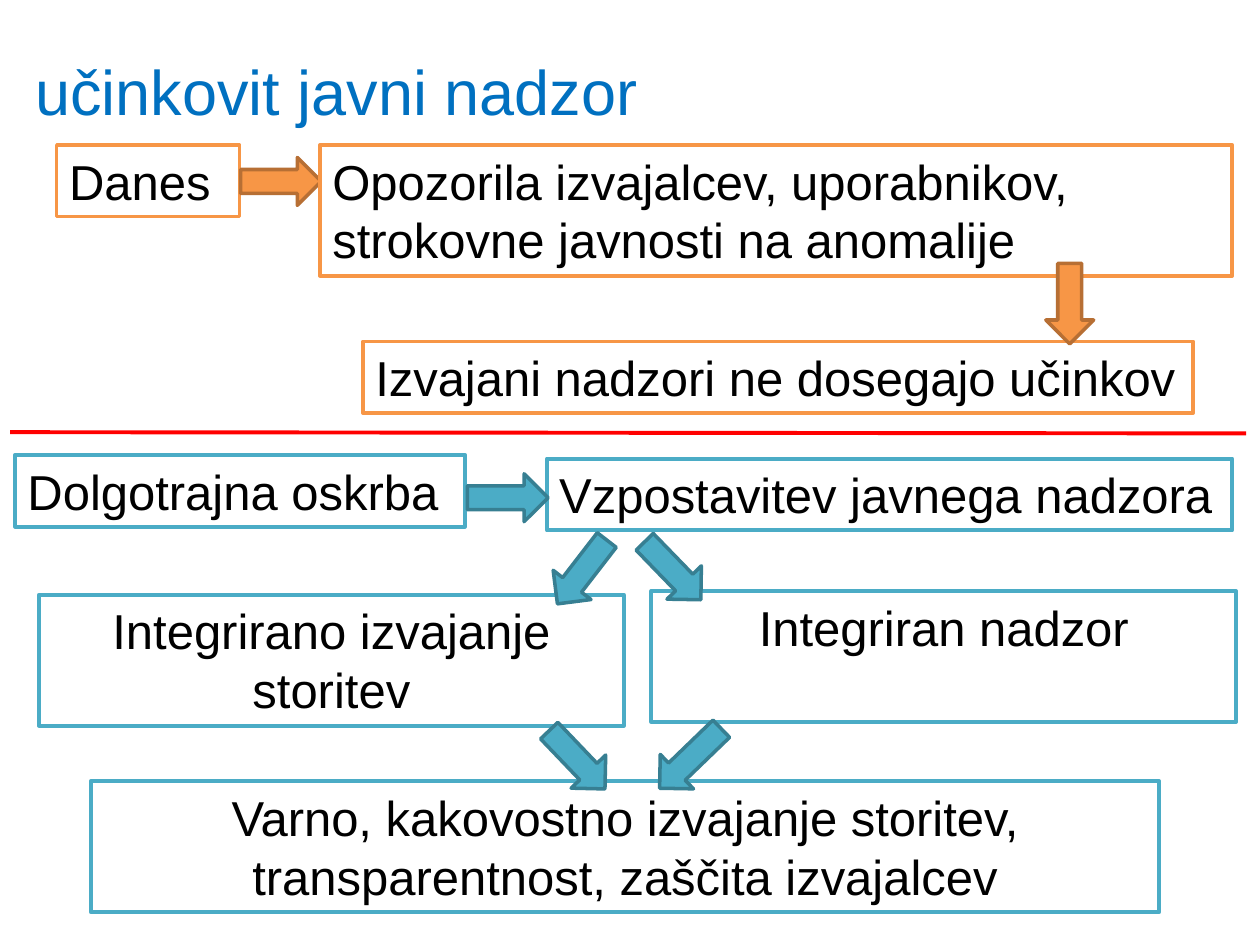
from pptx import Presentation
from pptx.dml.color import RGBColor
from pptx.enum import shapes, text
from pptx.oxml.ns import qn
from pptx.util import Inches, Pt
from lxml import etree

COLORS = {
    "white": "FFFFFF", "black": "000000", "title": "0070C0", "divider": "FF0000",
    "today": "F79646", "today_edge": "B76F34",
    "care": "4BACC6", "care_edge": "377F92",
}
LINE_WIDTHS = {"today": 2, "care": 2.25}
FONT = "Arial"


def color(name):
    return RGBColor.from_string(COLORS[name])


def fill_solid(shape, name):
    shape.fill.solid()
    shape.fill.fore_color.rgb = color(name)


def set_line(shape, name, width):
    shape.line.color.rgb = color(name)
    shape.line.width = Pt(width)


def add_run(paragraph, wording, size, name):
    run = paragraph.add_run()
    run.text = wording
    run.font.name = FONT
    run.font.size = Pt(size)
    run.font.color.rgb = color(name)


def set_title(slide, wording):
    title = slide.shapes.title
    title.left, title.top = Inches(0.28), Inches(0.38)
    title.width, title.height = Inches(9.33), Inches(1.19)
    fill_solid(title, "white")
    frame = title.text_frame
    frame.margin_left = frame.margin_right = frame.margin_bottom = 0
    frame.margin_top = Inches(0.04)
    frame.vertical_anchor = text.MSO_ANCHOR.TOP
    frame.auto_size = text.MSO_AUTO_SIZE.NONE
    heading = frame.paragraphs[0]
    heading.alignment = text.PP_ALIGN.LEFT
    add_run(heading, wording, 36, "title")


def add_statement(slide, wording, left, top, width, stage, lines=1, centred=False):
    height = 0.57 if lines == 1 else 1.04
    statement = slide.shapes.add_textbox(
        Inches(left), Inches(top), Inches(width), Inches(height))
    fill_solid(statement, "white")
    set_line(statement, stage, LINE_WIDTHS[stage])
    frame = statement.text_frame
    frame.word_wrap = True
    paragraph = frame.paragraphs[0]
    if centred:
        paragraph.alignment = text.PP_ALIGN.CENTER
    add_run(paragraph, wording, 28, "black")


def add_arrow(slide, left, top, stage, rotation=0, length=0.64):
    arrow = slide.shapes.add_shape(
        shapes.MSO_SHAPE.DOWN_ARROW,
        Inches(left), Inches(top), Inches(0.38), Inches(length))
    arrow.rotation = rotation
    arrow.shadow.inherit = False
    fill_solid(arrow, stage)
    set_line(arrow, f"{stage}_edge", 2)


def add_divider(slide):
    divider = slide.shapes.add_connector(
        shapes.MSO_CONNECTOR.STRAIGHT,
        Inches(0.08), Inches(3.43), Inches(9.89), Inches(3.44))
    set_line(divider, "divider", 2.25)
    etree.SubElement(divider._element.spPr, qn("a:effectLst"))


def main():
    presentation = Presentation()
    presentation.slide_width, presentation.slide_height = Inches(10), Inches(7.5)
    slide = presentation.slides.add_slide(presentation.slide_layouts[5])

    set_title(slide, "učinkovit javni nadzor")

    add_statement(slide, "Vzpostavitev javnega nadzora", 4.34, 3.64, 5.44, "care")
    add_statement(slide, "Integrirano izvajanje storitev", 0.31, 4.72, 4.64, "care", 2, True)
    add_statement(slide, "Integriran nadzor", 5.17, 4.69, 4.64, "care", 2, True)
    add_statement(
        slide, "Varno, kakovostno izvajanje storitev, transparentnost, zaščita izvajalcev",
        0.72, 6.2, 8.48, "care", 2, True)

    add_statement(slide, "Danes", 0.45, 1.15, 1.45, "today")
    add_statement(slide, "Izvajani nadzori ne dosegajo učinkov", 2.88, 2.71, 6.59, "today")
    add_arrow(slide, 2.04, 1.12, "today", 270)
    add_statement(
        slide, "Opozorila izvajalcev, uporabnikov, strokovne javnosti na anomalije",
        2.54, 1.15, 7.24, "today", 2)
    add_arrow(slide, 8.3, 2.09, "today")

    add_statement(slide, "Dolgotrajna oskrba", 0.12, 3.61, 3.57, "care")
    add_arrow(slide, 3.84, 3.63, "care", 270)
    add_arrow(slide, 4.43, 4.22, "care", 37.7)
    add_arrow(slide, 5.15, 4.21, "care", 315.9)
    add_arrow(slide, 4.39, 5.71, "care", 316.3)
    add_arrow(slide, 5.29, 5.68, "care", 46, 0.68)

    add_divider(slide)
    presentation.save("out.pptx")


if __name__ == "__main__":
    main()
